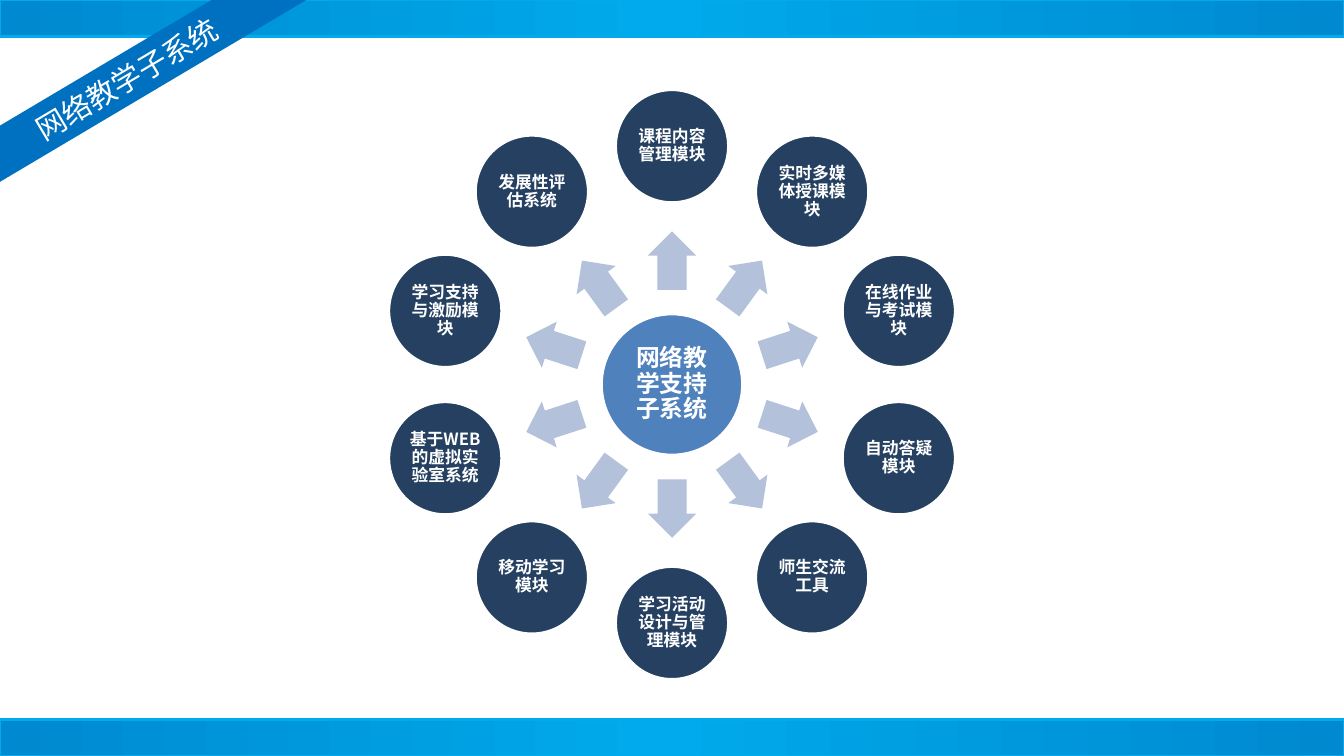
from copy import deepcopy
from dataclasses import dataclass
from math import cos, radians, sin

from lxml import etree
from pptx import Presentation
from pptx.dml.color import RGBColor
from pptx.enum.shapes import MSO_SHAPE
from pptx.enum.text import MSO_ANCHOR, PP_ALIGN
from pptx.oxml.ns import qn
from pptx.util import Inches, Pt

RECT = MSO_SHAPE.RECTANGLE
OVAL = MSO_SHAPE.OVAL
ARROW = MSO_SHAPE.RIGHT_ARROW
MIDDLE = MSO_ANCHOR.MIDDLE
CENTER = PP_ALIGN.CENTER


@dataclass(frozen=True)
class Theme:
    """Colours, fonts and type sizes of the slide."""
    edge: str = "0089CF"
    glow: str = "00AAEC"
    hub: str = "4F81BD"
    node: str = "254061"
    arrow: str = "B3C1DB"
    ribbon: str = "0070C0"
    white: str = "FFFFFF"
    body: str = "Noto Sans CJK KR"
    head: str = "Noto Sans CJK SC"
    title: int = 21
    large: int = 17
    small: int = 12
    rule: int = 2


THEME = Theme()
TITLE = "网络教学子系统"
HUB = "网络教学支持子系统"
NODES = [
    "课程内容管理模块", "实时多媒体授课模块", "在线作业与考试模块",
    "自动答疑模块", "师生交流工具", "学习活动设计与管理模块",
    "移动学习模块", "基于WEB的虚拟实验室系统", "学习支持与激励模块",
    "发展性评估系统",
]


def rgb(code):
    """Turn a hex code into a colour."""
    return RGBColor.from_string(code)


def draw(slide, kind, box, fill=None, line=None, turn=0):
    """Add a preset shape in a box of inches."""
    shape = slide.shapes.add_shape(kind, *map(Inches, box))
    shape.shadow.inherit = False
    shape.rotation = turn
    if fill:
        shape.fill.solid()
        shape.fill.fore_color.rgb = rgb(fill)
    if line:
        shape.line.color.rgb = rgb(line)
        shape.line.width = Pt(THEME.rule)
    else:
        shape.line.fill.background()
    return shape


def write(shape, text, size, font=THEME.body, bold=False, pad=(0.02, 0.02),
          lead=1.0, after=0):
    """Write one centred paragraph into a shape."""
    frame = shape.text_frame
    frame.word_wrap = True
    frame.vertical_anchor = MIDDLE
    frame.margin_left = frame.margin_right = Inches(pad[0])
    frame.margin_top = frame.margin_bottom = Inches(pad[1])
    para = frame.paragraphs[0]
    para.alignment = CENTER
    para.line_spacing = lead
    para.space_after = Pt(after)
    run = para.add_run()
    run.text = text
    run.font.size = Pt(size)
    run.font.bold = bold
    run.font.name = font
    run.font.color.rgb = rgb(THEME.white)
    east = etree.SubElement(run.font._element, qn("a:ea"))
    east.set("typeface", font)


def band(slide, box):
    """Draw a bar that is brightest in the middle."""
    bar = draw(slide, RECT, box, line=THEME.glow)
    bar.fill.gradient()
    bar.fill.gradient_angle = 0
    first = bar._element.spPr.find(".//" + qn("a:gs"))
    first.addnext(deepcopy(first))
    tones = [(0, THEME.edge), (0.49, THEME.glow), (1, THEME.edge)]
    for stop, (place, tone) in zip(bar.fill.gradient_stops, tones):
        stop.position = place
        stop.color.rgb = rgb(tone)


def disc(slide, x, y, width, fill, text, size, pad):
    """Draw a labelled circle around a centre."""
    box = (x - width / 2, y - width / 2, width, width)
    shape = draw(slide, OVAL, box, fill, THEME.white)
    write(shape, text, size, bold=True, pad=(pad, 0.02), lead=0.9,
          after=0.35 * size)


def wheel(slide, box):
    """Draw the hub, its arrows and the ring of nodes in a square box."""
    left, top, side = box
    x, y = left + side / 2, top + side / 2
    node, long, wide = 1.12, 0.58, 0.48
    ring, near = (side - node) / 2, 1.23
    disc(slide, x, y, 1.4, THEME.hub, HUB, THEME.large, 0.03)
    step = 360 / len(NODES)
    for i, text in enumerate(NODES):
        turn = (270 + i * step) % 360
        dx, dy = cos(radians(turn)), sin(radians(turn))
        spot = (x + near * dx - long / 2, y + near * dy - wide / 2, long, wide)
        arrow = draw(slide, ARROW, spot, THEME.arrow, turn=turn)
        arrow.adjustments[0] = 0.6
        arrow.adjustments[1] = 0.5
        disc(slide, x + ring * dx, y + ring * dy, node, THEME.node, text,
             THEME.small, 0.02)


def ribbon(slide, box):
    """Draw the slanted title ribbon."""
    shape = draw(slide, RECT, box, THEME.ribbon, turn=329.3)
    write(shape, TITLE, THEME.title, font=THEME.head, pad=(0.13, 0.06))


def main():
    """Build and save the slide."""
    deck = Presentation()
    wide, high, thick = 13.33, 7.5, 0.36
    deck.slide_width, deck.slide_height = Inches(wide), Inches(high)
    slide = deck.slides.add_slide(deck.slide_layouts[6])
    for top in (0, high - thick):
        band(slide, (0, top, wide, thick))
    wheel(slide, (3.74, 0.89, 5.85))
    ribbon(slide, (-1.05, 0.54, 4.61, 0.48))
    deck.save("out.pptx")


if __name__ == "__main__":
    main()
